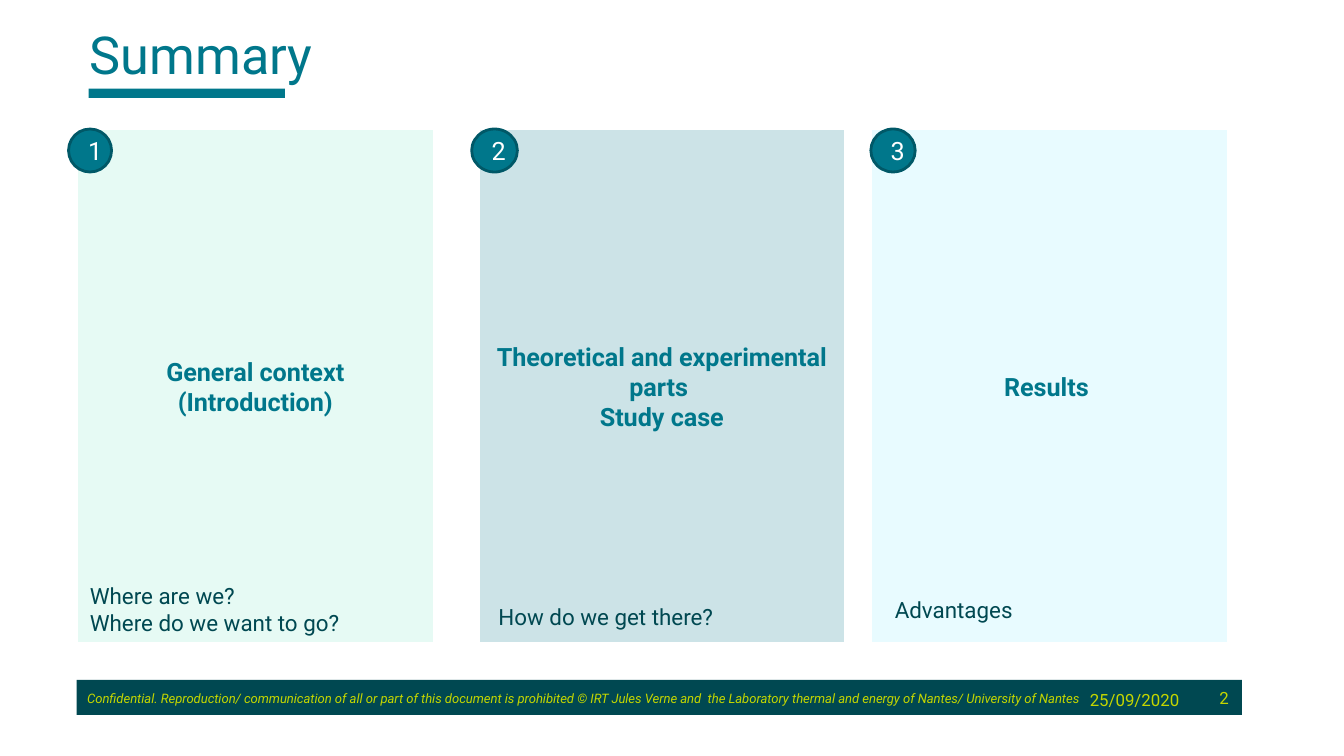
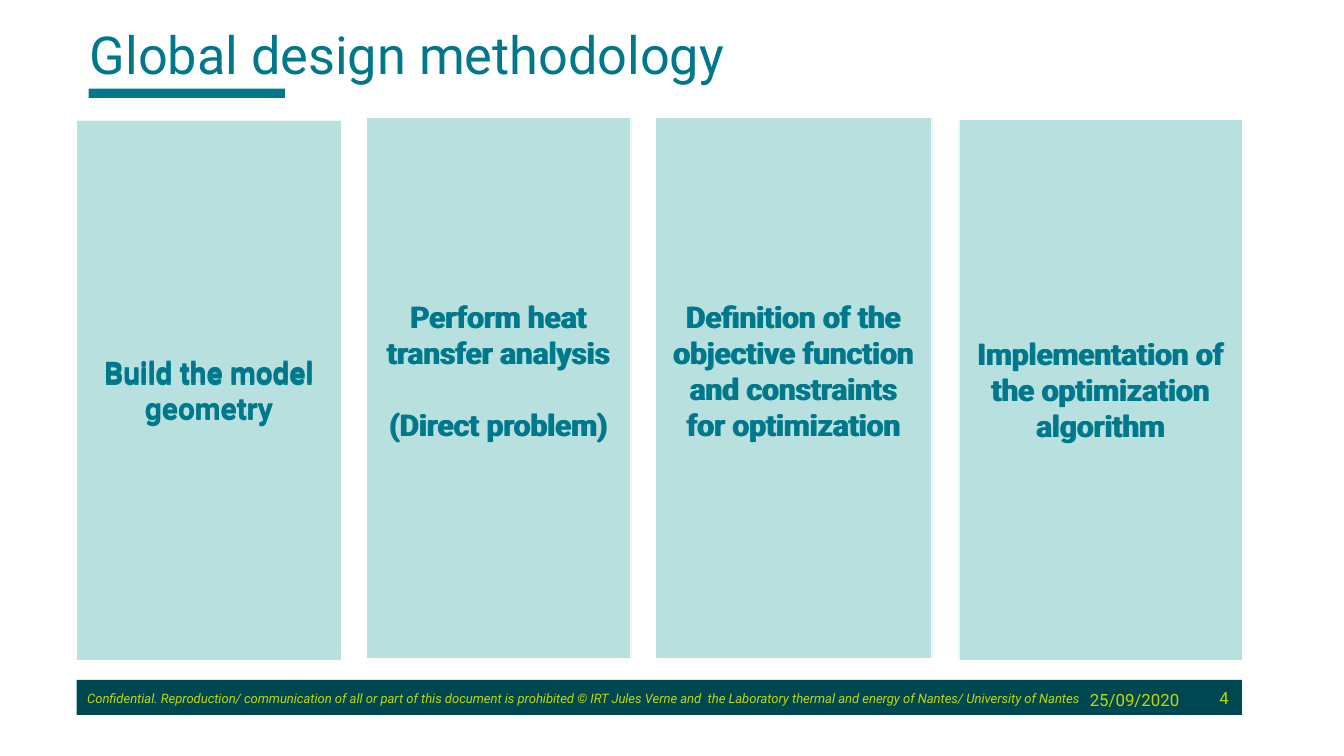
"""Builds the summary and design methodology slides."""
import pptx
import pptx.dml.color
import pptx.enum.shapes
import pptx.enum.text
import pptx.oxml.ns
import pptx.util
from lxml import etree

Inches, Pt = pptx.util.Inches, pptx.util.Pt
RECTANGLE = pptx.enum.shapes.MSO_SHAPE.RECTANGLE
OVAL = pptx.enum.shapes.MSO_SHAPE.OVAL
ALIGN = pptx.enum.text.PP_ALIGN
MIDDLE = pptx.enum.text.MSO_ANCHOR.MIDDLE
GROW = pptx.enum.text.MSO_AUTO_SIZE.SHAPE_TO_FIT_TEXT

FONT = "Roboto"
COLORS = {
    "teal": "00778B", "dark": "004851", "rim": "005867", "lime": "C4D600",
    "green": "10CF9B", "sky": "B5F4FF", "white": "FFFFFF",
}
CONFIDENTIALITY = (
    "Confidential. Reproduction/ communication of all or part of this document is prohibited "
    "© IRT Jules Verne and  the Laboratory thermal and energy of Nantes/ University of Nantes"
)
DATE = "25/09/2020"
FOOTER_TOP, FOOTER_HEIGHT = 5.06, 0.26

CHAPTER_TOP, CHAPTER_HEIGHT = 0.96, 3.83
CHAPTERS = [
    {"heading": "General context\n(Introduction)", "left": 0.57, "width": 2.66,
     "tint": ("green", 10), "badge": (0.51, 0.32),
     "question": "Where are we?\nWhere do we want to go?", "question_box": (0.57, 4.28, 2.74, 0.5)},
    {"heading": "Theoretical and experimental parts \nStudy case", "left": 3.56, "width": 2.73,
     "tint": ("teal", 20), "badge": (3.51, 0.34),
     "question": "How do we get there?", "question_box": (3.61, 4.44, 2.74, 0.3)},
    {"heading": "Results ", "left": 6.48, "width": 2.66,
     "tint": ("sky", 30), "badge": (6.48, 0.33),
     "question": "Advantages", "question_box": (6.56, 4.39, 2.74, 0.3)},
]

STEP_HEIGHT, STEP_LINE = 4.04, 19.2
STEP_TINTS = [("teal", 20), ("green", 10)]
STEPS = [
    {"text": "Build the model geometry", "width": 1.99,
     "corners": [(0.56, 0.89), (0.56, 0.88)], "lines_below": 0},
    {"text": "Perform heat transfer analysis\n(Direct problem)", "width": 1.99,
     "corners": [(2.71, 0.87), (2.72, 0.87)], "lines_below": 1},
    {"text": "Definition of the objective function and constraints for optimization", "width": 2.08,
     "corners": [(4.86, 0.87), (4.87, 0.87)], "lines_below": 1},
    {"text": "Implementation of the optimization algorithm", "width": 2.13,
     "corners": [(7.13, 0.88), (7.12, 0.88)], "lines_below": 0},
]


def rgb(color):
    return pptx.dml.color.RGBColor.from_string(COLORS[color])


def write(shape, text, size, color, align=ALIGN.LEFT, bold=False, italic=False):
    frame = shape.text_frame
    frame.text = text
    for paragraph in frame.paragraphs:
        paragraph.alignment = align
        for run in paragraph.runs:
            run.font.name, run.font.size = FONT, Pt(size)
            run.font.bold, run.font.italic = bold, italic
            run.font.color.rgb = rgb(color)
    return frame


def add_text(slide, box, text, size, color, wrap=True, grow=True, **style):
    textbox = slide.shapes.add_textbox(*map(Inches, box))
    frame = write(textbox, text, size, color, **style)
    frame.word_wrap = wrap
    if grow:
        frame.auto_size = GROW
    return frame


def add_block(slide, kind, box, fill, opacity=100, line=None):
    block = slide.shapes.add_shape(kind, *map(Inches, box))
    block.shadow.inherit = False
    block.fill.solid()
    block.fill.fore_color.rgb = rgb(fill)
    if opacity < 100:
        qn = pptx.oxml.ns.qn
        tint = block._element.spPr.find(qn("a:solidFill"))[0]
        etree.SubElement(tint, qn("a:alpha"), val=str(opacity * 1000))
    if line:
        block.line.color.rgb = rgb(line)
        block.line.width = Pt(1.5)
    else:
        block.line.fill.background()
    block.text_frame.vertical_anchor = MIDDLE
    return block


def add_panel(slide, box, tint, text, size):
    panel = add_block(slide, RECTANGLE, box, *tint, line="white")
    return write(panel, text, size, "teal", ALIGN.CENTER, bold=True)


def start_slide(deck, title, number):
    slide = deck.slides.add_slide(deck.slide_layouts[6])
    add_block(slide, RECTANGLE, (0.57, FOOTER_TOP, 8.67, FOOTER_HEIGHT), "dark")
    page = add_text(slide, (6.99, FOOTER_TOP, 2.25, FOOTER_HEIGHT), str(number), 9, "lime",
                    grow=False, align=ALIGN.RIGHT)
    page.vertical_anchor = MIDDLE
    add_text(slide, (0.55, 5.09, 7.58, 0.22), CONFIDENTIALITY, 7, "lime", wrap=False, italic=True)
    add_block(slide, RECTANGLE, (0.66, 0.66, 1.46, 0.07), "teal")
    add_text(slide, (8.01, 5.08, 0.91, 0.25), DATE, 9, "lime", wrap=False)
    heading = add_text(slide, (0.57, 0.17, 8.62, 0.44), title, 28, "teal", grow=False)
    heading.paragraphs[0].line_spacing = 0.9
    return slide


def build_summary(deck):
    slide = start_slide(deck, "Summary", 2)
    for chapter in CHAPTERS:
        box = (chapter["left"], CHAPTER_TOP, chapter["width"], CHAPTER_HEIGHT)
        add_panel(slide, box, chapter["tint"], chapter["heading"], 13.5)
    for number, chapter in enumerate(CHAPTERS, 1):
        left, width = chapter["badge"]
        badge = add_block(slide, OVAL, (left, CHAPTER_TOP, width, 0.32), "teal", line="rim")
        write(badge, str(number), 13.5, "white", ALIGN.CENTER)
    for chapter in CHAPTERS:
        add_text(slide, chapter["question_box"], chapter["question"], 12, "dark")


def build_methodology(deck):
    slide = start_slide(deck, "Global design methodology", 4)
    for layer, tint in enumerate(STEP_TINTS):
        for step in STEPS:
            box = (*step["corners"][layer], step["width"], STEP_HEIGHT)
            frame = add_panel(slide, box, tint, step["text"], 16)
            frame.margin_bottom = Inches(0.05) + Pt(STEP_LINE * step["lines_below"])
            for paragraph in frame.paragraphs[1:]:
                paragraph.space_before = Pt(STEP_LINE)


def main():
    deck = pptx.Presentation()
    deck.slide_width = Inches(10)
    deck.slide_height = deck.slide_width * 9 // 16
    build_summary(deck)
    build_methodology(deck)
    deck.save("out.pptx")


if __name__ == "__main__":
    main()
